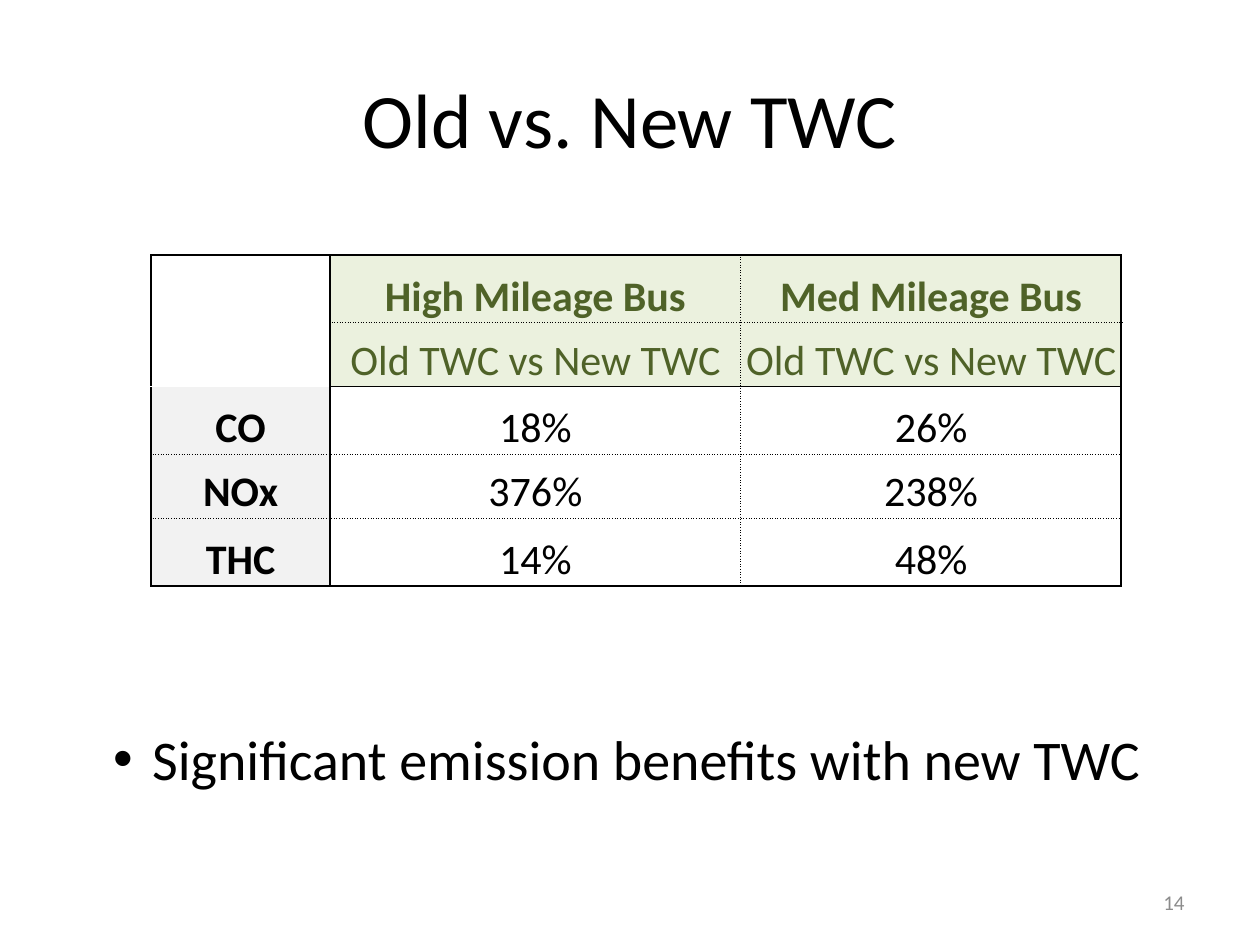
from lxml import etree
from pptx import Presentation, util as u
from pptx.dml.color import RGBColor
from pptx.enum import text as t
from pptx.oxml import ns

BLACK = RGBColor(0, 0, 0)
GRAY = RGBColor(0x8C, 0x8C, 0x8C)
GREEN = RGBColor(0x4F, 0x62, 0x28)
PALE = RGBColor(0xEB, 0xF1, 0xDE)
LIGHT = RGBColor(0xF2, 0xF2, 0xF2)
WIDE, HIGH = u.Inches(10), u.Inches(7.5)

COLS = (1.41, 3.24, 3)
ROWS = (0.53, 0.5, 0.53, 0.5, 0.53)
DATA = (
    ("", "High Mileage Bus", "Med Mileage Bus"),
    ("", "Old TWC vs New TWC", "Old TWC vs New TWC"),
    ("CO", "18%", "26%"),
    ("NOx", "376%", "238%"),
    ("THC", "14%", "48%"),
)
THICK, SOLID, THIN, DOT = (1.5, "solid"), (1, "solid"), (0.5, "solid"), (0.5, "sysDot")
UPRIGHT = (THICK, SOLID, DOT, THICK)
LEVEL = (THICK, DOT, THIN, DOT, DOT, THICK)


def share(x, y, w, h):
    return [int(n) for n in (x * WIDE, y * HIGH, w * WIDE, h * HIGH)]


def write(frame, words, size=24, color=BLACK, bold=False, align=t.PP_ALIGN.CENTER):
    para = frame.paragraphs[0]
    para.alignment = align
    run = para.add_run()
    run.text = words
    run.font.name = "Calibri"
    run.font.size = u.Pt(size)
    run.font.bold = bold
    run.font.color.rgb = color
    return para


def label(slide, box, words, anchor=t.MSO_ANCHOR.MIDDLE, **style):
    frame = slide.shapes.add_textbox(*box).text_frame
    frame.word_wrap = True
    frame.vertical_anchor = anchor
    return write(frame, words, **style)


def bullet(slide, box, words):
    para = label(slide, box, words, t.MSO_ANCHOR.TOP, size=32, align=t.PP_ALIGN.LEFT)
    props = para._p.get_or_add_pPr()
    props.set("marL", str(u.Inches(0.81)))
    props.set("indent", str(u.Inches(-0.31)))
    font = etree.SubElement(props, ns.qn("a:buFont"))
    font.set("typeface", "Arial")
    etree.SubElement(props, ns.qn("a:buChar")).set("char", "•")


def edge(cell, side, rule):
    width, dash = rule
    line = etree.SubElement(cell._tc.get_or_add_tcPr(), ns.qn("a:ln" + side))
    line.set("w", str(u.Pt(width)))
    fill = etree.SubElement(line, ns.qn("a:solidFill"))
    etree.SubElement(fill, ns.qn("a:srgbClr")).set("val", str(BLACK))
    etree.SubElement(line, ns.qn("a:prstDash")).set("val", dash)


def dress(cell, row, col):
    corner = row < 2 and col == 0
    edge(cell, "L", UPRIGHT[col])
    edge(cell, "R", UPRIGHT[col + 1])
    if not (corner and row == 1):
        edge(cell, "T", LEVEL[row])
    if not (corner and row == 0):
        edge(cell, "B", LEVEL[row + 1])
    shade = None if corner else PALE if row < 2 else LIGHT if col == 0 else None
    if shade is None:
        cell.fill.background()
    else:
        cell.fill.solid()
        cell.fill.fore_color.rgb = shade
    cell.margin_left = cell.margin_right = cell.margin_top = u.Inches(0.01)
    cell.margin_bottom = 0
    cell.vertical_anchor = t.MSO_ANCHOR.BOTTOM


def grid(slide, box):
    table = slide.shapes.add_table(len(ROWS), len(COLS), *box).table
    table.first_row = table.horz_banding = False
    for col, part in zip(table.columns, COLS):
        col.width = int(box[2] * part / sum(COLS))
    for row, part in zip(table.rows, ROWS):
        row.height = int(box[3] * part / sum(ROWS))
    table.cell(0, 0).merge(table.cell(1, 0))
    for r, line in enumerate(DATA):
        for c, words in enumerate(line):
            cell = table.cell(r, c)
            dress(cell, r, c)
            if words:
                write(cell.text_frame, words, color=GREEN if r < 2 else BLACK,
                      bold=r == 0 or c == 0)


def main():
    deck = Presentation()
    deck.slide_width, deck.slide_height = WIDE, HIGH
    slide = deck.slides.add_slide(deck.slide_layouts[6])
    label(slide, share(0.05, 0.04, 0.9, 0.17), "Old vs. New TWC", size=44)
    bullet(slide, share(0.03, 0.76, 0.92, 0.09),
           "Significant emission benefits with new TWC")
    label(slide, share(0.72, 0.93, 0.23, 0.05), "14", size=12, color=GRAY,
          align=t.PP_ALIGN.RIGHT)
    grid(slide, share(0.12, 0.27, 0.77, 0.35))
    deck.save("out.pptx")


if __name__ == "__main__":
    main()
